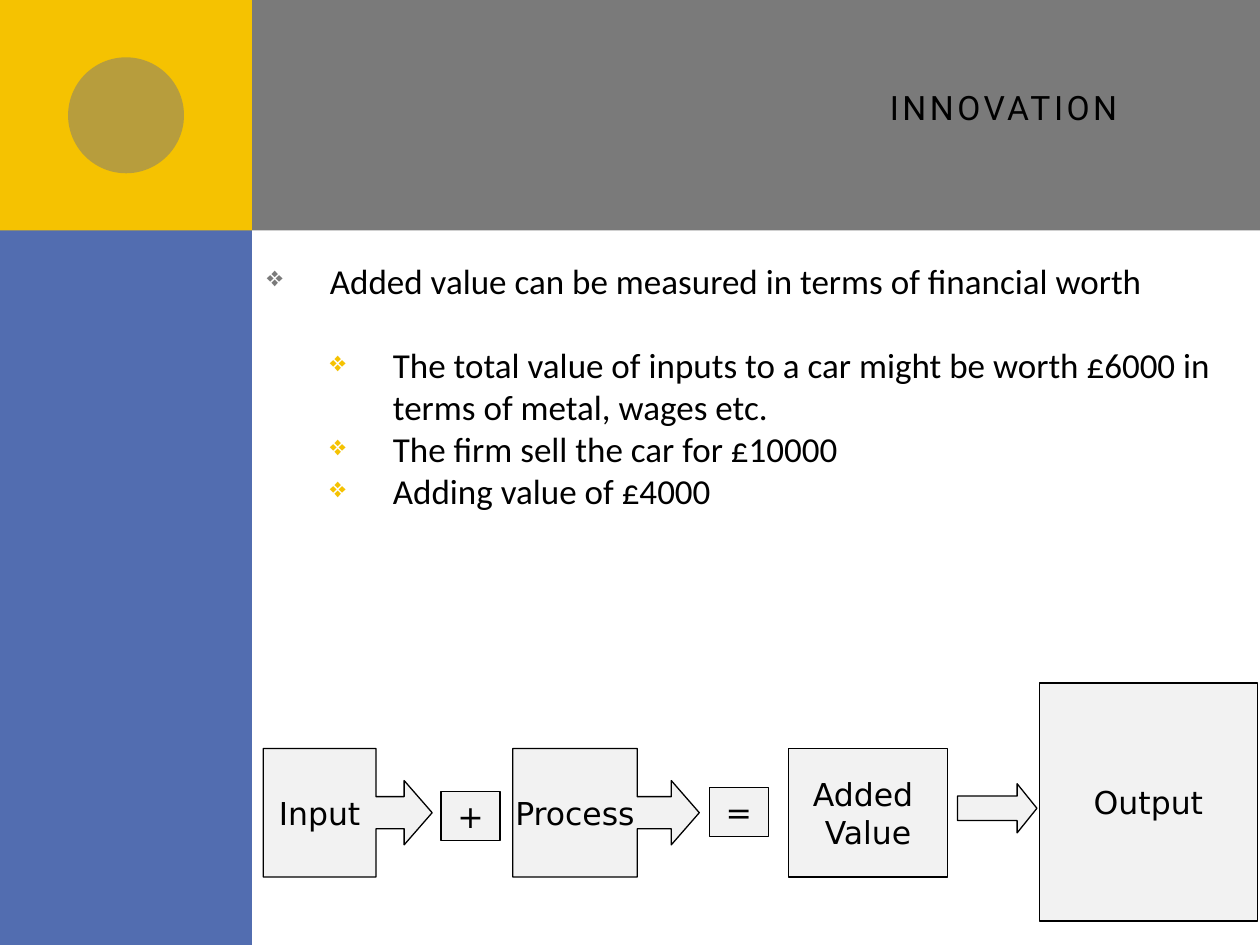
from lxml import etree
from pptx import Presentation
from pptx.dml.color import RGBColor
from pptx.enum.shapes import MSO_SHAPE
from pptx.enum.text import MSO_ANCHOR, PP_ALIGN
from pptx.oxml.ns import qn
from pptx.util import Inches, Pt

RECT, OVAL = MSO_SHAPE.RECTANGLE, MSO_SHAPE.OVAL
ARROW, CALLOUT = MSO_SHAPE.RIGHT_ARROW, MSO_SHAPE.RIGHT_ARROW_CALLOUT
MIDDLE, CENTER, RIGHT = MSO_ANCHOR.MIDDLE, PP_ALIGN.CENTER, PP_ALIGN.RIGHT

GRAY = RGBColor(0x7A, 0x7A, 0x7A)
BLUE = RGBColor(0x52, 0x6D, 0xB0)
GOLD = RGBColor(0xF5, 0xC2, 0x01)
PALE = RGBColor(0xF2, 0xF2, 0xF2)
BLACK = RGBColor(0, 0, 0)

TITLE = {"name": "Roboto", "size": Pt(24)}
BODY = {"name": "Calibri", "size": Pt(20)}
LABEL = {"name": "DejaVu Sans", "size": Pt(18)}

POINTS = [
    (0, "Added value can be measured in terms of financial worth"),
    (1, "The total value of inputs to a car might be worth £6000 in terms of metal, wages etc."),
    (1, "The firm sell the car for £10000"),
    (1, "Adding value of £4000"),
]

# kind, left, top, width, height, adjustments, lines of text
HEAD = (0.25, 0.25, 0.218, 0.667)
STEPS = [
    (CALLOUT, 0, 0.52, 1.34, 1.02, HEAD, ["Input"]),
    (RECT, 1.41, 0.86, 0.47, 0.39, (), ["+"]),
    (CALLOUT, 1.98, 0.52, 1.48, 1.02, HEAD, ["Process"]),
    (RECT, 3.54, 0.83, 0.47, 0.39, (), ["="]),
    (RECT, 4.17, 0.52, 1.26, 1.02, (), ["Added ", "Value"]),
    (ARROW, 5.51, 0.8, 0.63, 0.39, (0.5, 0.402), []),
    (RECT, 6.16, 0, 1.73, 1.89, (), ["Output"]),
]


def add_run(para, text, style):
    run = para.add_run()
    run.text = text
    for key, value in style.items():
        setattr(run.font, key, value)
    run.font.color.rgb = BLACK
    return run


def add_shape(slide, kind, x, y, w, h, fill):
    shape = slide.shapes.add_shape(kind, Inches(x), Inches(y), Inches(w), Inches(h))
    shape.shadow.inherit = False
    shape.fill.solid()
    shape.fill.fore_color.rgb = fill
    shape.line.fill.background()
    return shape


def add_frame(slide, x, y, w, h):
    box = slide.shapes.add_textbox(Inches(x), Inches(y), Inches(w), Inches(h))
    box.text_frame.word_wrap = True
    return box.text_frame


def add_para(frame, index):
    return frame.add_paragraph() if index else frame.paragraphs[0]


def add_bullet(para, level, color):
    """Give the paragraph a hanging diamond bullet for its level."""
    props = para._p.get_or_add_pPr()
    props.set("marL", str(Inches(0.5 * (level + 1))))
    props.set("indent", str(Inches(-0.5)))
    tint = etree.SubElement(props, qn("a:buClr"))
    etree.SubElement(tint, qn("a:srgbClr"), val=str(color))
    etree.SubElement(props, qn("a:buSzPct"), val="80000")
    etree.SubElement(props, qn("a:buChar"), char="❖")


def add_bands(slide, x, y, w, h):
    """Draw the header, the side bar and the corner with its disc."""
    side, top, disc = 2, 1.83, 0.92
    add_shape(slide, RECT, x + side, y, w - side, top, GRAY)
    add_shape(slide, RECT, x, y, side, h, BLUE)
    add_shape(slide, RECT, x, y, side, top, GOLD)
    dot = add_shape(slide, OVAL, x + (side - disc) / 2, y + (top - disc) / 2,
                    disc, disc, GRAY)
    color = dot.fill._xPr.find(qn("a:solidFill"))[0]
    etree.SubElement(color, qn("a:alpha"), val="50000")


def add_title(slide, x, y, w, h):
    frame = add_frame(slide, x, y, w, h)
    frame.vertical_anchor = MIDDLE
    frame.margin_right = Inches(0.35)
    para = frame.paragraphs[0]
    para.alignment = RIGHT
    props = add_run(para, "innovation", TITLE).font._element
    props.set("cap", "small")
    props.set("spc", "200")


def add_points(slide, x, y, w, h):
    frame = add_frame(slide, x, y, w, h)
    for i, (level, text) in enumerate(POINTS):
        para = add_para(frame, i)
        para.level = level
        if i == 1:
            para.space_before = Pt(24)
        add_bullet(para, level, GOLD if level else GRAY)
        add_run(para, text, BODY)


def add_flow(slide, x, y):
    """Draw the chain from input to output."""
    for kind, left, top, w, h, adjust, lines in STEPS:
        shape = add_shape(slide, kind, x + left, y + top, w, h, PALE)
        shape.line.color.rgb = BLACK
        shape.line.width = Pt(0.75)
        for i, value in enumerate(adjust):
            shape.adjustments[i] = value
        frame = shape.text_frame
        frame.word_wrap = False
        frame.vertical_anchor = MIDDLE
        for i, text in enumerate(lines):
            para = add_para(frame, i)
            para.alignment = CENTER
            add_run(para, text, LABEL)


def main():
    deck = Presentation()
    deck.slide_width, deck.slide_height = Inches(10), Inches(7.5)
    slide = deck.slides.add_slide(deck.slide_layouts[6])
    add_bands(slide, 0, 0, 10, 7.5)
    add_title(slide, 1.5, 0.33, 8, 0.98)
    add_points(slide, 2.02, 2.01, 7.7, 3.2)
    add_flow(slide, 2.09, 5.42)
    deck.save("out.pptx")


if __name__ == "__main__":
    main()
